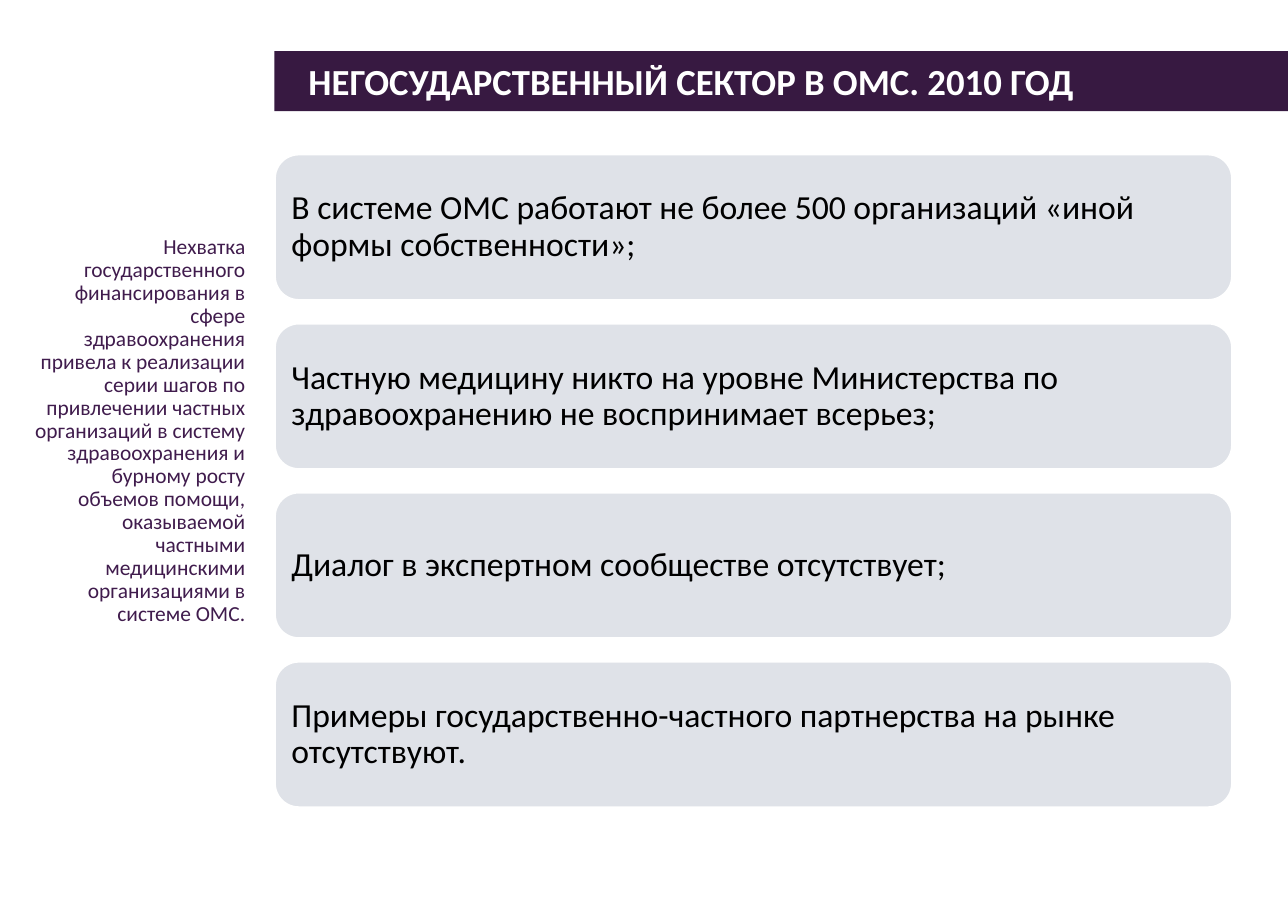
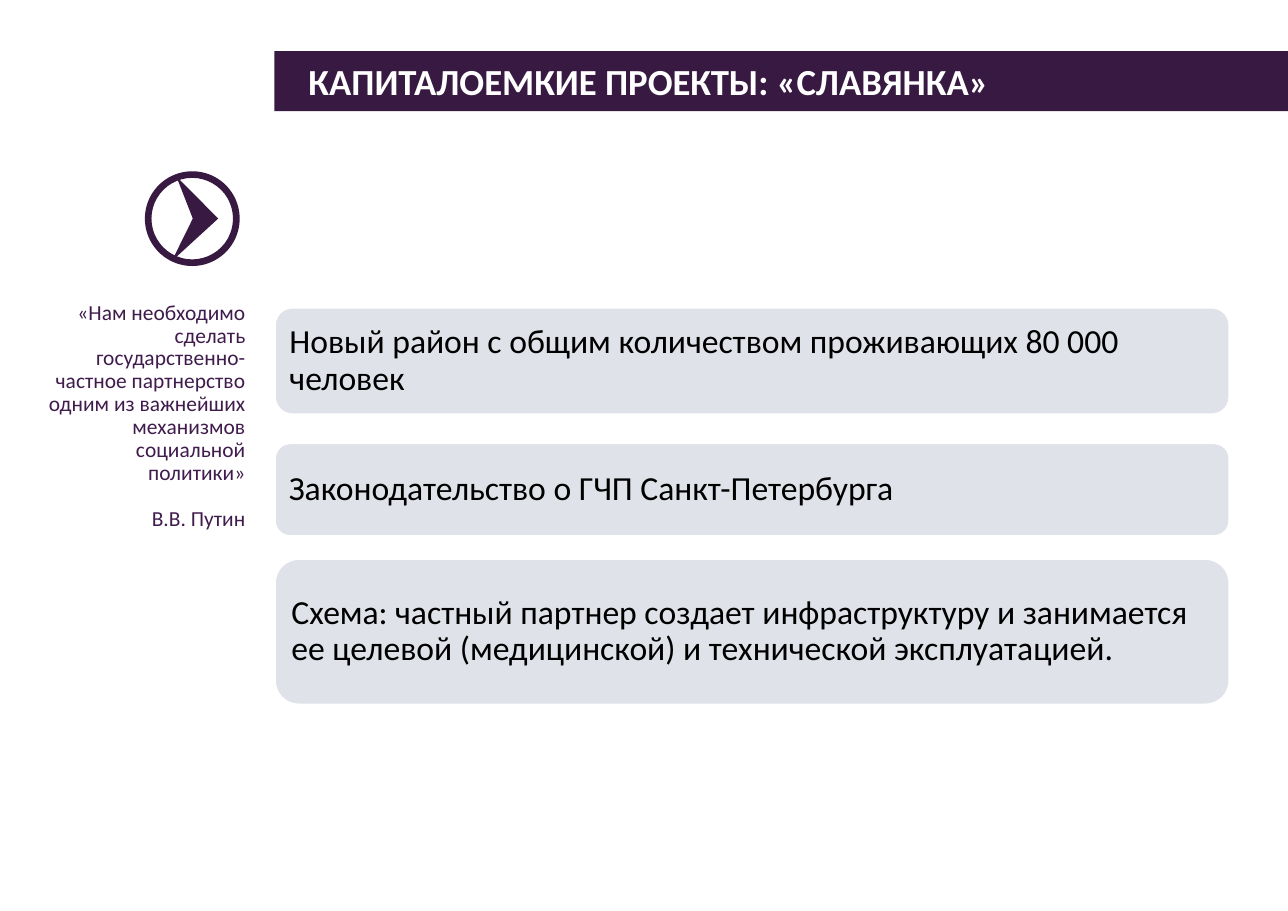
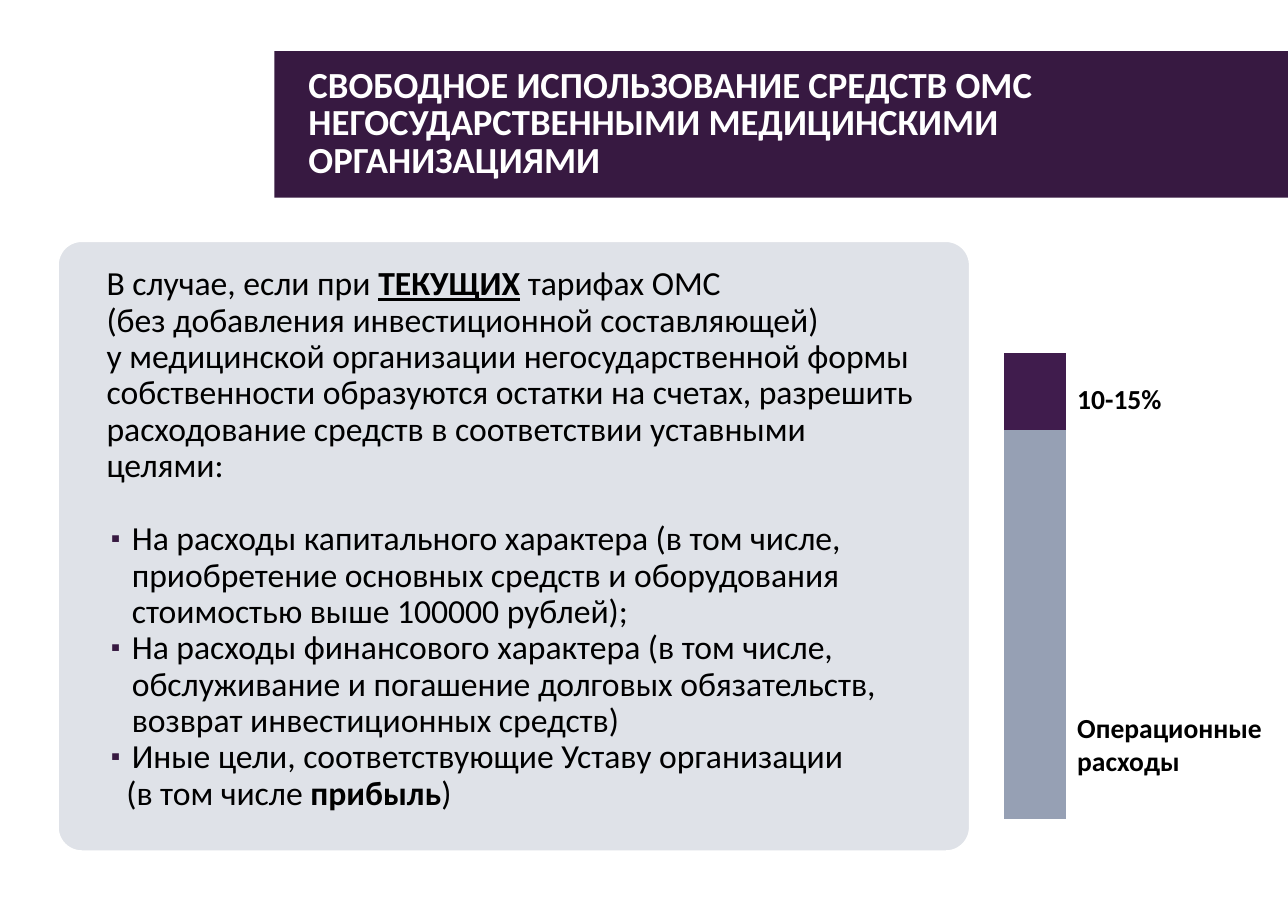
import dataclasses
import typing

import lxml.etree
import pptx
import pptx.chart.data
import pptx.dml.color
import pptx.enum.chart
import pptx.enum.shapes
import pptx.enum.text
import pptx.oxml.ns
import pptx.util

SLIDE_WIDTH = pptx.util.Inches(11.69)
SLIDE_HEIGHT = pptx.util.Inches(8.27)
TITLE_ONLY_LAYOUT = 5
TITLE_AND_CONTENT_LAYOUT = 1

ALIGN = pptx.enum.text.PP_ALIGN
ANCHOR = pptx.enum.text.MSO_ANCHOR
SHAPE = pptx.enum.shapes.MSO_SHAPE
qn = pptx.oxml.ns.qn


@dataclasses.dataclass(frozen=True)
class Theme:
    font: str = "Calibri"
    band: str = "371941"
    accent: str = "401C4D"
    panel: str = "96A0B4"
    panel_opacity: int = 30
    white: str = "FFFFFF"
    black: str = "000000"
    title_size: int = 24
    body_size: int = 22
    label_size: int = 18
    sidebar_size: int = 14
    sidebar_line: int = 15


THEME = Theme()


@dataclasses.dataclass(frozen=True)
class Frame:
    """A rectangle in percent of the slide's width and height."""

    left: float
    top: float
    width: float
    height: float

    def emu(self) -> tuple[int, int, int, int]:
        return (across(self.left), down(self.top), across(self.width), down(self.height))


@dataclasses.dataclass(frozen=True)
class Run:
    text: str
    bold: bool = False
    underline: bool = False


@dataclasses.dataclass(frozen=True)
class Card:
    text: str
    top: float
    height: float


@dataclasses.dataclass(frozen=True)
class Label:
    lines: tuple[str, ...]
    frame: Frame


CONTENT_LEFT = 21.3
BAND_TOP = 5.6
CARD_HEIGHT = 16.1


def across(percent: float) -> int:
    return round(SLIDE_WIDTH * percent / 100)


def down(percent: float) -> int:
    return round(SLIDE_HEIGHT * percent / 100)


def rgb(color: str) -> pptx.dml.color.RGBColor:
    return pptx.dml.color.RGBColor.from_string(color)


def add_bullet(paragraph: typing.Any, character: str) -> None:
    """Set the paragraph's bullet; an empty character turns it off."""
    properties = paragraph._p.get_or_add_pPr()
    if not character:
        lxml.etree.SubElement(properties, qn("a:buNone"))
        return
    color = lxml.etree.SubElement(properties, qn("a:buClr"))
    lxml.etree.SubElement(color, qn("a:srgbClr"), val=THEME.band)
    lxml.etree.SubElement(properties, qn("a:buSzPct"), val="80000")
    lxml.etree.SubElement(properties, qn("a:buChar"), char=character)


def write(
    text_frame: typing.Any,
    text: str | tuple[Run, ...],
    *,
    size: int,
    color: str = THEME.black,
    bold: bool = False,
    align: ALIGN = ALIGN.LEFT,
    line_spacing: float | pptx.util.Length | None = None,
    space_before: float = 0,
    bullet: str = "",
    margin: float = 0,
    indent: float = 0,
) -> None:
    """Add one paragraph, filling the first one if it is still empty."""
    paragraph = text_frame.paragraphs[-1]
    if paragraph.runs:
        paragraph = text_frame.add_paragraph()
    paragraph.alignment = align
    paragraph.line_spacing = line_spacing
    paragraph.space_before = pptx.util.Pt(space_before)
    properties = paragraph._p.get_or_add_pPr()
    properties.set("marL", str(pptx.util.Inches(margin)))
    properties.set("indent", str(pptx.util.Inches(indent)))
    add_bullet(paragraph, bullet)
    for part in (Run(text, bold),) if isinstance(text, str) else text:
        for index, line in enumerate(part.text.split("\n")):
            if index:
                paragraph.add_line_break()
            run = paragraph.add_run()
            run.text = line
            run.font.name = THEME.font
            run.font.size = pptx.util.Pt(size)
            run.font.bold = part.bold
            run.font.underline = part.underline
            run.font.color.rgb = rgb(color)


def set_up_text(
    text_frame: typing.Any,
    anchor: ANCHOR,
    left: float = 0.1,
    top: float = 0.05,
    right: float = 0.1,
    wrap: bool = True,
) -> None:
    text_frame.word_wrap = wrap
    text_frame.auto_size = pptx.enum.text.MSO_AUTO_SIZE.NONE
    text_frame.vertical_anchor = anchor
    text_frame.margin_left = pptx.util.Inches(left)
    text_frame.margin_right = pptx.util.Inches(right)
    text_frame.margin_top = text_frame.margin_bottom = pptx.util.Inches(top)


def place(shape: typing.Any, frame: Frame) -> None:
    shape.left, shape.top, shape.width, shape.height = frame.emu()


def paint(shape: typing.Any, color: str) -> None:
    shape.shadow.inherit = False
    shape.fill.solid()
    shape.fill.fore_color.rgb = rgb(color)
    shape.line.fill.background()


def add_slide(
    presentation: typing.Any,
    title: str,
    layout: int = TITLE_ONLY_LAYOUT,
    band_height: float = 6.6,
    line_spacing: float | None = None,
) -> typing.Any:
    slide = presentation.slides.add_slide(presentation.slide_layouts[layout])
    band = slide.shapes.title
    place(band, Frame(CONTENT_LEFT, BAND_TOP, 100 - CONTENT_LEFT, band_height))
    band.fill.solid()
    band.fill.fore_color.rgb = rgb(THEME.band)
    set_up_text(band.text_frame, ANCHOR.MIDDLE, left=0.31)
    write(band.text_frame, title, size=THEME.title_size, color=THEME.white,
          bold=True, line_spacing=line_spacing)
    return slide


def add_panel(slide: typing.Any, frame: Frame) -> typing.Any:
    """Add a translucent rounded rectangle with a white outline."""
    panel = slide.shapes.add_shape(SHAPE.ROUNDED_RECTANGLE, *frame.emu())
    paint(panel, THEME.panel)
    fill_color = panel.element.spPr.find(qn("a:solidFill")).find(qn("a:srgbClr"))
    lxml.etree.SubElement(fill_color, qn("a:alpha"), val=str(THEME.panel_opacity * 1000))
    panel.line.color.rgb = rgb(THEME.white)
    panel.line.width = pptx.util.Pt(2)
    return panel


def add_cards(slide: typing.Any, cards: typing.Iterable[Card], width: float) -> None:
    for card in cards:
        panel = add_panel(slide, Frame(CONTENT_LEFT, card.top, width, card.height))
        set_up_text(panel.text_frame, ANCHOR.MIDDLE, left=0.09, top=0.09, right=0.09)
        write(panel.text_frame, card.text, size=THEME.body_size, line_spacing=0.9)


def add_sidebar(slide: typing.Any, paragraphs: tuple[str, ...], top: float, height: float) -> None:
    sidebar = slide.shapes.add_textbox(*Frame(1.8, top, 18.1, height).emu())
    set_up_text(sidebar.text_frame, ANCHOR.TOP)
    for index, text in enumerate(paragraphs):
        write(sidebar.text_frame, text, size=THEME.sidebar_size, color=THEME.accent,
              align=ALIGN.RIGHT, line_spacing=pptx.util.Pt(THEME.sidebar_line),
              space_before=THEME.sidebar_line if index else 0)


def add_arrow_icon(slide: typing.Any) -> None:
    ring = slide.shapes.add_shape(SHAPE.DONUT, *Frame(11.25, 18.8, 7.36, 10.4).emu())
    ring.adjustments[0] = 0.07
    paint(ring, THEME.band)
    notch, *corners = [
        (across(x), down(y))
        for x, y in ((14.97, 24), (13.69, 19.35), (16.94, 24), (13.34, 28.66))
    ]
    builder = slide.shapes.build_freeform(*notch)
    builder.add_line_segments(corners, close=True)
    paint(builder.convert_to_shape(), THEME.band)


def add_spending_chart(slide: typing.Any) -> None:
    data = pptx.chart.data.CategoryChartData()
    data.categories = ["1"]
    data.add_series("Series 1", [100])
    data.add_series("Series 2", [20])
    chart = slide.shapes.add_chart(
        pptx.enum.chart.XL_CHART_TYPE.COLUMN_STACKED,
        *Frame(74.1, 28.3, 12.7, 62.9).emu(), data).chart
    chart.has_legend = chart.has_title = False
    chart.font.name = THEME.font
    chart.font.size = pptx.util.Pt(THEME.label_size)
    chart.font.color.rgb = rgb(THEME.black)
    chart.category_axis.visible = chart.value_axis.visible = False
    chart.value_axis.has_major_gridlines = False
    chart.value_axis.minimum_scale, chart.value_axis.maximum_scale = 0, 140
    plot = chart.plots[0]
    plot.gap_width, plot.overlap, plot.vary_by_categories = 150, 100, False
    for series, color in zip(plot.series, (THEME.panel, THEME.accent)):
        series.format.fill.solid()
        series.format.fill.fore_color.rgb = rgb(color)
    set_plot_area(chart, x=0.02, y=0.03, w=0.95, h=0.95)


def set_plot_area(chart: typing.Any, **shares: float) -> None:
    """Fix the inner plot area as shares of the chart's size."""
    plot_area = chart.element.find(".//" + qn("c:plotArea"))
    for automatic in plot_area.findall(qn("c:layout")):
        plot_area.remove(automatic)
    layout = lxml.etree.Element(qn("c:layout"))
    plot_area.insert(0, layout)
    manual = lxml.etree.SubElement(layout, qn("c:manualLayout"))
    settings = {"layoutTarget": "inner", "xMode": "edge", "yMode": "edge", **shares}
    for name, value in settings.items():
        lxml.etree.SubElement(manual, qn("c:" + name), val=str(value))


def build_sector_slide(presentation: typing.Any) -> None:
    slide = add_slide(presentation, "НЕГОСУДАРСТВЕННЫЙ СЕКТОР В ОМС. 2010 ГОД")
    texts = (
        "В системе ОМС работают не более 500 организаций «иной формы собственности»;",
        "Частную медицину никто на уровне Министерства по здравоохранению не воспринимает всерьез;",
        "Диалог в экспертном сообществе отсутствует;",
        "Примеры государственно-частного партнерства на рынке отсутствуют.",
    )
    first_top, pitch = 16.9, 18.56
    add_cards(slide, [Card(text, first_top + row * pitch, CARD_HEIGHT)
                      for row, text in enumerate(texts)], width=74.4)
    add_sidebar(slide, (
        "Нехватка государственного финансирования в сфере здравоохранения привела "
        "к реализации серии шагов по привлечении частных организаций в систему "
        "здравоохранения и бурному росту объемов помощи, оказываемой частными "
        "медицинскими организациями в системе ОМС.",
    ), top=25.3, height=44.5)


def build_project_slide(presentation: typing.Any) -> None:
    slide = add_slide(presentation, "КАПИТАЛОЕМКИЕ ПРОЕКТЫ: «СЛАВЯНКА»")
    add_cards(slide, (
        Card("Новый район с общим количеством проживающих 80 000 человек", 33.7, 11.85),
        Card("Законодательство о ГЧП Санкт-Петербурга", 48.6, 10.3),
        Card("Схема: частный партнер создает инфраструктуру и занимается ее целевой "
             "(медицинской) и технической эксплуатацией.", 61.3, CARD_HEIGHT),
    ), width=74.2)
    add_sidebar(slide, (
        "«Нам необходимо сделать государственно-частное партнерство одним из "
        "важнейших механизмов социальной политики»",
        "В.В. Путин",
    ), top=32.5, height=24.1)
    add_arrow_icon(slide)


def build_spending_slide(presentation: typing.Any) -> None:
    slide = add_slide(
        presentation,
        "СВОБОДНОЕ ИСПОЛЬЗОВАНИЕ СРЕДСТВ ОМС\nНЕГОСУДАРСТВЕННЫМИ МЕДИЦИНСКИМИ\nОРГАНИЗАЦИЯМИ",
        layout=TITLE_AND_CONTENT_LAYOUT, band_height=16.1, line_spacing=0.85)
    add_spending_chart(slide)
    for label in (
        Label(("Операционные", "расходы"), Frame(82.8, 77.4, 16.2, 8.6)),
        Label(("10-15%",), Frame(82.8, 41.35, 8.4, 4.8)),
    ):
        box = slide.shapes.add_textbox(*label.frame.emu())
        set_up_text(box.text_frame, ANCHOR.TOP, wrap=False)
        for line in label.lines:
            write(box.text_frame, line, size=THEME.label_size, bold=True)

    panel = add_panel(slide, Frame(4.45, 26.4, 70.9, 67.1))
    panel.adjustments[0] = 0.04
    body = slide.placeholders[1]
    place(body, Frame(7.5, 28.2, 64.8, 62.9))
    panel.element.addnext(body.element)
    text_frame = body.text_frame
    set_up_text(text_frame, ANCHOR.TOP, left=0.09, top=0.09, right=0.09)
    write(text_frame, (
        Run("В случае, если при "),
        Run("ТЕКУЩИХ", bold=True, underline=True),
        Run(" тарифах ОМС\n(без добавления инвестиционной составляющей)\n"
            "у медицинской организации негосударственной формы собственности "
            "образуются остатки на счетах, разрешить расходование средств "
            "в соответствии уставными целями:"),
    ), size=THEME.body_size, line_spacing=0.9)
    purposes = (
        "На расходы капитального характера (в том числе, приобретение основных "
        "средств и оборудования стоимостью выше 100000 рублей);",
        "На расходы финансового характера (в том числе, обслуживание и погашение "
        "долговых обязательств, возврат инвестиционных средств)",
        "Иные цели, соответствующие Уставу организации",
    )
    for index, purpose in enumerate(purposes):
        write(text_frame, purpose, size=THEME.body_size, line_spacing=0.9,
              space_before=0 if index else 24, bullet="▪", margin=0.23, indent=-0.19)
    write(text_frame, (Run("(в том числе "), Run("прибыль", bold=True), Run(")")),
          size=THEME.body_size, line_spacing=0.9, margin=0.18)


def main() -> None:
    presentation = pptx.Presentation()
    presentation.slide_width = SLIDE_WIDTH
    presentation.slide_height = SLIDE_HEIGHT
    build_sector_slide(presentation)
    build_project_slide(presentation)
    build_spending_slide(presentation)
    presentation.save("out.pptx")


if __name__ == "__main__":
    main()
